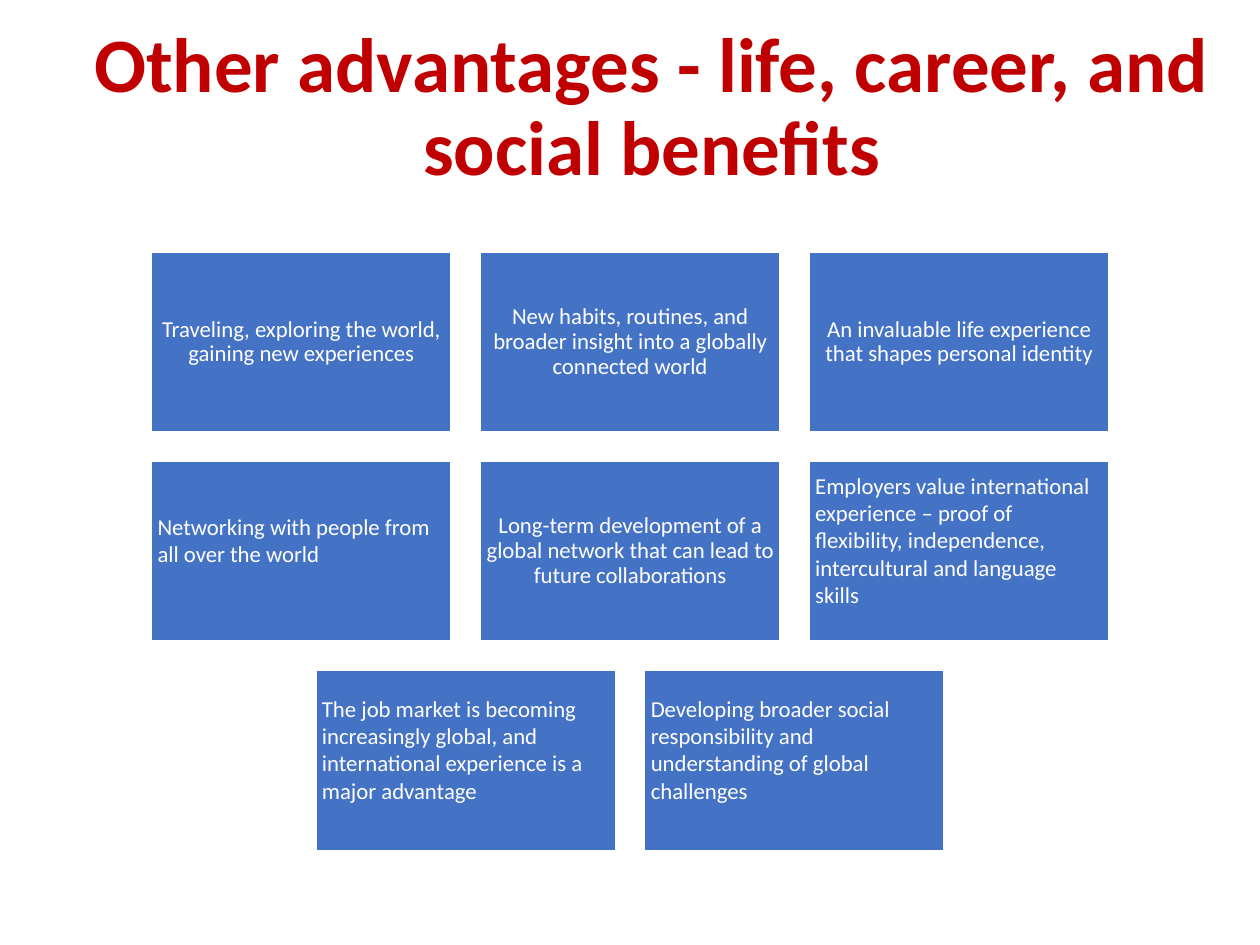
import pptx
import pptx.util
import pptx.dml.color
import pptx.enum.shapes
import pptx.enum.text

Inches = pptx.util.Inches
Pt = pptx.util.Pt
RGBColor = pptx.dml.color.RGBColor
ALIGN = pptx.enum.text.PP_ALIGN
MIDDLE = pptx.enum.text.MSO_ANCHOR.MIDDLE

RED = RGBColor(0xC0, 0x00, 0x00)
BLUE = RGBColor(0x44, 0x72, 0xC4)
WHITE = RGBColor(0xFF, 0xFF, 0xFF)

TITLE = "Other advantages - life, career, and social benefits"

# Each card: text, and whether it is centred (otherwise left-aligned)
CARD_ROWS = [
    [("Traveling, exploring the world, gaining new experiences", True),
     ("New habits, routines, and broader insight into a globally connected world", True),
     ("An invaluable life experience that shapes personal identity", True)],
    [("Networking with people from all over the world", False),
     ("Long-term development of a global network that can lead to future collaborations", True),
     ("Employers value international experience – proof of flexibility, independence, "
      "intercultural and language skills", False)],
    [("The job market is becoming increasingly global, and international experience "
      "is a major advantage", False),
     ("Developing broader social responsibility and understanding of global challenges", False)],
]


def write_text(tf, text, *, size, color, bold=False, align=ALIGN.CENTER,
               spacing=0.9, inset=0.05, bottom=0.05):
    tf.word_wrap = True
    tf.auto_size = pptx.enum.text.MSO_AUTO_SIZE.NONE
    tf.vertical_anchor = MIDDLE
    tf.margin_left = tf.margin_right = Inches(inset)
    tf.margin_top = Inches(0.05)
    tf.margin_bottom = Inches(bottom)
    p = tf.paragraphs[0]
    p.alignment = align
    p.line_spacing = spacing
    p.space_before = Pt(0)
    r = p.add_run()
    r.text = text
    r.font.name = "Calibri"
    r.font.size = Pt(size)
    r.font.bold = bold
    r.font.color.rgb = color


def add_title(s, left, top, width, height):
    sp = s.shapes.title
    sp.left, sp.top = Inches(left), Inches(top)
    sp.width, sp.height = Inches(width), Inches(height)
    # The deep bottom inset lifts the two lines above the box centre
    write_text(sp.text_frame, TITLE, size=44, color=RED, bold=True,
               inset=0.1, bottom=0.57)


def add_card(s, text, centred, left, top, width, height):
    sp = s.shapes.add_shape(pptx.enum.shapes.MSO_SHAPE.RECTANGLE, Inches(left),
                            Inches(top), Inches(width), Inches(height))
    sp.shadow.inherit = False
    sp.fill.solid()
    sp.fill.fore_color.rgb = BLUE
    sp.line.color.rgb = WHITE
    sp.line.width = Pt(1)
    if centred:
        write_text(sp.text_frame, text, size=13, color=WHITE)
    else:
        write_text(sp.text_frame, text, size=13, color=WHITE,
                   align=ALIGN.LEFT, spacing=1.0, bottom=0.23)


def add_card_grid(s, left, top, width, height, gap=0.23):
    columns = max(len(row) for row in CARD_ROWS)
    card_w = (width - gap * (columns - 1)) / columns
    card_h = (height - gap * (len(CARD_ROWS) - 1)) / len(CARD_ROWS)
    for i, row in enumerate(CARD_ROWS):
        # Shorter rows are centred in the grid
        x = left + (columns - len(row)) * (card_w + gap) / 2
        y = top + i * (card_h + gap)
        for j, (text, centred) in enumerate(row):
            add_card(s, text, centred, x + j * (card_w + gap), y, card_w, card_h)


def main():
    prs = pptx.Presentation()
    prs.slide_width, prs.slide_height = Inches(10), Inches(7.5)
    s = prs.slides.add_slide(prs.slide_layouts[5])
    add_title(s, 0.35, 0.4, 9.65, 1.45)
    add_card_grid(s, 1.2, 2, 7.6, 4.75)
    prs.save("out.pptx")


if __name__ == "__main__":
    main()
